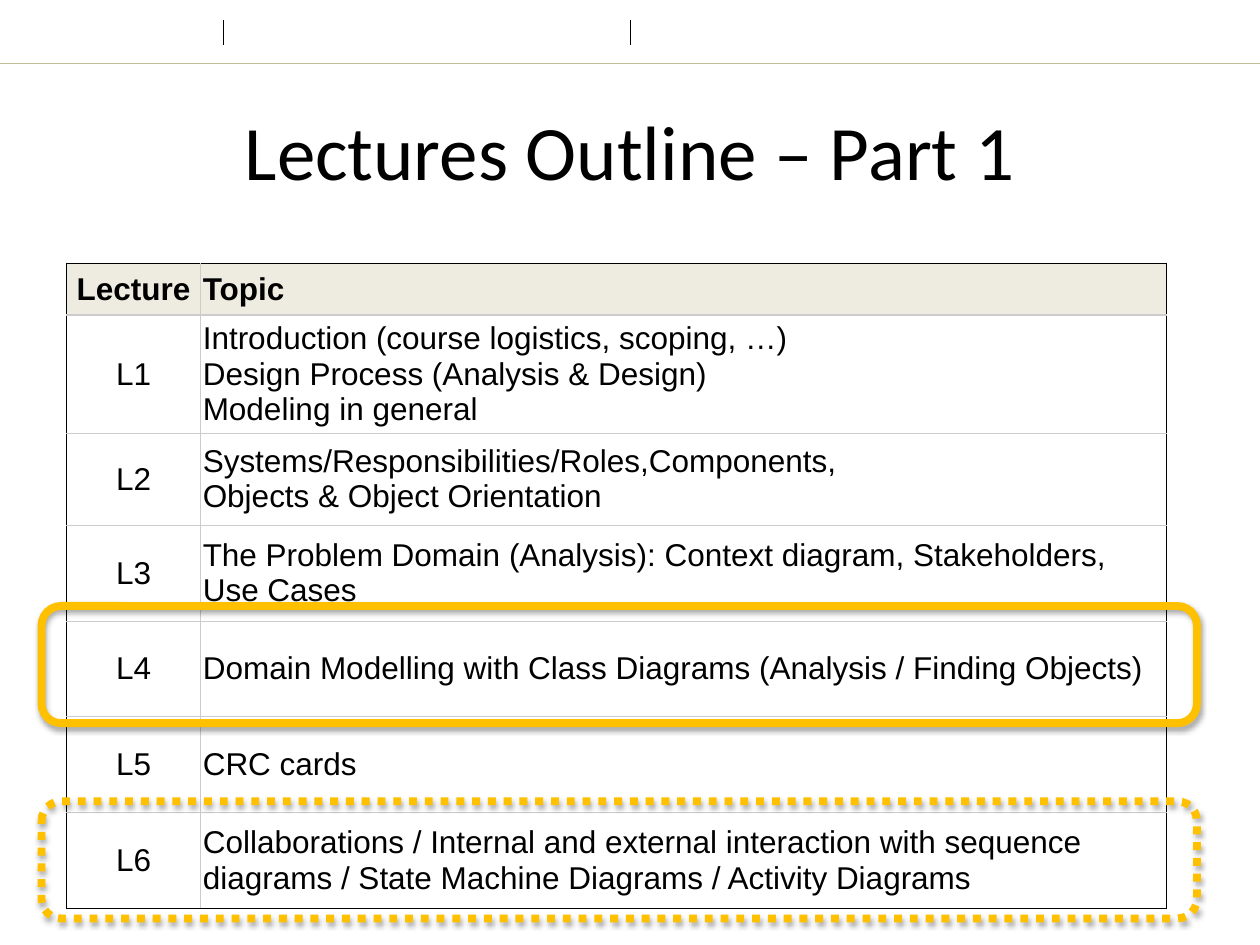
from lxml.etree import SubElement
from pptx import Presentation
from pptx.dml.color import RGBColor
from pptx.enum.dml import MSO_LINE
from pptx.enum.shapes import MSO_CONNECTOR, MSO_SHAPE
from pptx.enum.text import MSO_ANCHOR, PP_ALIGN
from pptx.oxml.ns import qn
from pptx.util import Inches, Pt

BLACK = RGBColor(0x00, 0x00, 0x00)
GRID = RGBColor(0xCC, 0xCC, 0xCC)
HEADER = RGBColor(0xEE, 0xEC, 0xE1)
TAN = RGBColor(0xC4, 0xBD, 0x97)
AMBER = RGBColor(0xFF, 0xC0, 0x00)

TITLE = "Lectures Outline – Part 1"
LECTURES = [
    ("Lecture", "Topic"),
    ("L1", "Introduction (course logistics, scoping, …)\v"
           "Design Process (Analysis & Design)\vModeling in general"),
    ("L2", "Systems/Responsibilities/Roles,Components, \vObjects & Object Orientation"),
    ("L3", "The Problem Domain (Analysis): Context diagram, Stakeholders, Use Cases"),
    ("L4", "Domain Modelling with Class Diagrams (Analysis / Finding Objects)"),
    ("L5", "CRC cards"),
    ("L6", "Collaborations / Internal and external interaction with sequence "
           "diagrams / State Machine Diagrams / Activity Diagrams"),
]
COLUMNS = [1.06, 7.67]
ROWS = [0.41, 0.76, 0.73] + [0.76] * 4
RULES = [
    ((0, 0.5), (10, 0.5), TAN, 0.25),
    ((1.77, 0.16), (1.77, 0.36), BLACK, 0.5),
    ((5, 0.16), (5, 0.36), BLACK, 0.5),
]
HIGHLIGHTS = [(4.81, MSO_LINE.SOLID), (6.36, MSO_LINE.ROUND_DOT)]


def write(tf, text, font, size, align, bold=False):
    tf.word_wrap = True
    p = tf.paragraphs[0]
    p.text = text
    p.alignment = align
    for r in p.runs:
        r.font.name, r.font.size, r.font.bold = font, Pt(size), bold
        r.font.color.rgb = BLACK


def add_color(parent, color):
    fill = SubElement(parent, qn("a:solidFill"))
    return SubElement(fill, qn("a:srgbClr"), val=str(color))


def add_rule(s, start, end, color, width):
    line = s.shapes.add_connector(MSO_CONNECTOR.STRAIGHT, *map(Inches, start + end))
    line.line.color.rgb = color
    line.line.width = Pt(width)
    SubElement(line._element.spPr, qn("a:effectLst"))


def set_borders(cell, outer):
    tcPr = cell._tc.get_or_add_tcPr()
    for side in "LRTB":
        ln = SubElement(tcPr, qn(f"a:ln{side}"), w=str(Pt(0.75)))
        add_color(ln, BLACK if side in outer else GRID)


def add_lectures(s):
    frame = s.shapes.add_table(len(ROWS), len(COLUMNS), Inches(0.53), Inches(2.09),
                               Inches(sum(COLUMNS)), Inches(sum(ROWS)))
    table = frame.table
    for column, width in zip(table.columns, COLUMNS):
        column.width = Inches(width)
    for i, (row, height) in enumerate(zip(table.rows, ROWS)):
        row.height = Inches(height)
        for j, cell in enumerate(row.cells):
            outer = "LR"[j] + ("T" if i == 0 else "")
            outer += "B" if i == len(ROWS) - 1 else ""
            set_borders(cell, outer)
            if i == 0:
                cell.fill.solid()
                cell.fill.fore_color.rgb = HEADER
            else:
                cell.fill.background()
            cell.margin_left = cell.margin_right = Inches(0.02)
            cell.margin_top = cell.margin_bottom = Inches(0.02)
            cell.vertical_anchor = MSO_ANCHOR.MIDDLE
            align = PP_ALIGN.LEFT if j else PP_ALIGN.CENTER
            write(cell.text_frame, LECTURES[i][j], "Arial", 18, align, i == 0)


def add_highlight(s, top, dash):
    sp = s.shapes.add_shape(MSO_SHAPE.ROUNDED_RECTANGLE, Inches(0.33), Inches(top),
                            Inches(9.17), Inches(0.93))
    sp.fill.background()
    sp.line.color.rgb = AMBER
    sp.line.width = Pt(4.5)
    sp.line.dash_style = dash
    sp.shadow.inherit = False
    effects = sp._element.spPr.find(qn("a:effectLst"))
    shadow = SubElement(effects, qn("a:outerShdw"), blurRad=str(Pt(3.1)),
                        dist=str(Pt(1.8)), dir="5400000", rotWithShape="0")
    SubElement(add_shadow_color(shadow), qn("a:alpha"), val="35000")


def add_shadow_color(shadow):
    return SubElement(shadow, qn("a:srgbClr"), val=str(BLACK))


def main():
    prs = Presentation()
    prs.slide_width, prs.slide_height = Inches(10), Inches(7.5)
    s = prs.slides.add_slide(prs.slide_layouts[6])
    for rule in RULES:
        add_rule(s, *rule)
    title = s.shapes.add_textbox(Inches(0.5), Inches(0.5), Inches(9), Inches(1.38))
    title.text_frame.vertical_anchor = MSO_ANCHOR.MIDDLE
    write(title.text_frame, TITLE, "Calibri", 44, PP_ALIGN.CENTER)
    add_lectures(s)
    for highlight in HIGHLIGHTS:
        add_highlight(s, *highlight)
    prs.save("out.pptx")


if __name__ == "__main__":
    main()
